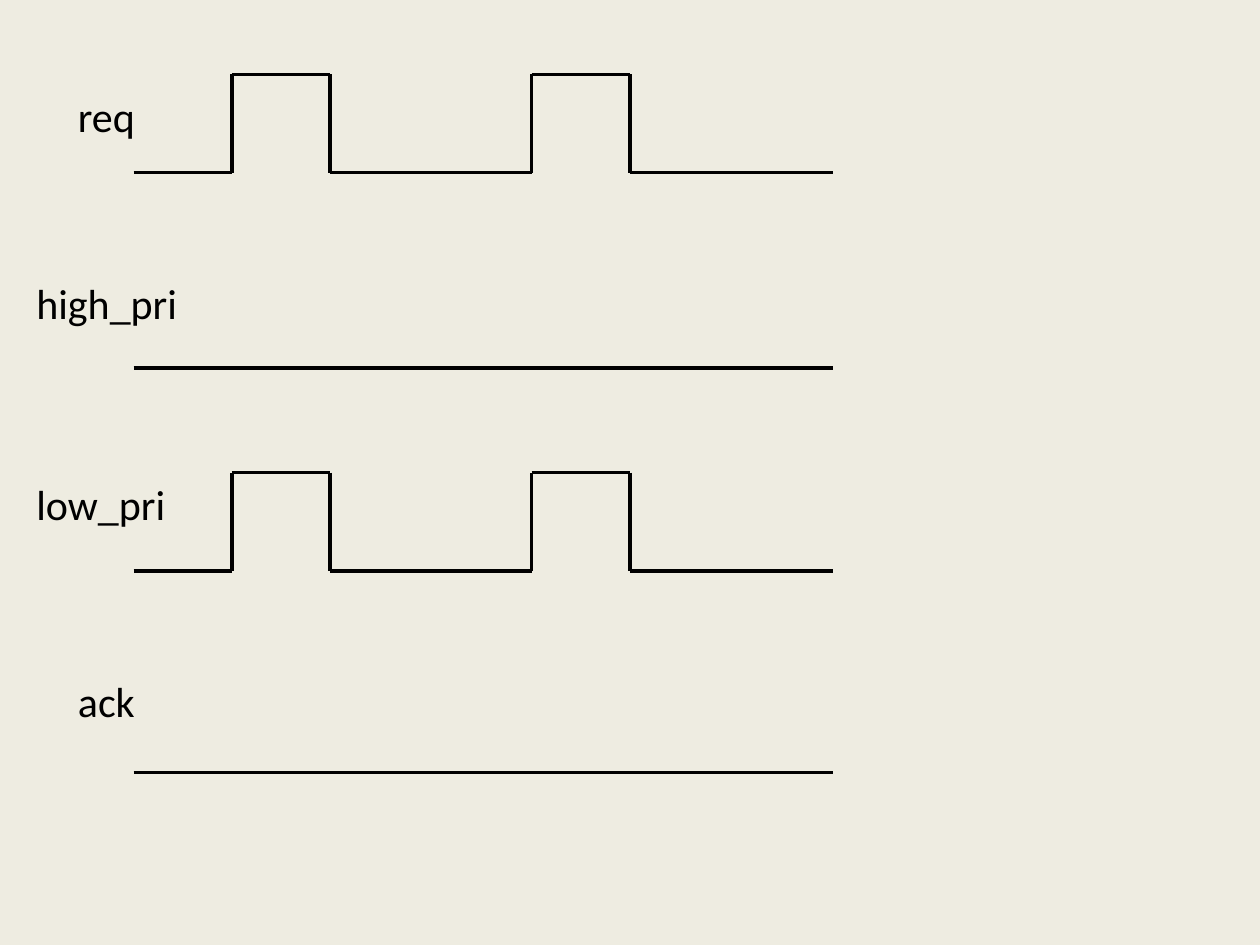
from itertools import pairwise
from pptx import Presentation
from pptx.dml.color import RGBColor
from pptx.enum.shapes import MSO_CONNECTOR as Link
from pptx.enum.text import MSO_AUTO_SIZE as Fit
from pptx.oxml.ns import qn
from pptx.util import Inches, Pt
from lxml.etree import SubElement

INK = RGBColor(0, 0, 0)
PAPER = RGBColor(0xEE, 0xEC, 0xE1)
START, END, RISE = 1.06, 6.61, 0.78
EDGES = [1.84, 2.62, 4.22, 5]
FONT = {"name": "Calibri", "size": Pt(24)}
SIGNALS = [
    {"name": "req", "box": (0.52, 0.67, 0.66, 0.5), "base": 1.37, "edges": EDGES, "wrap": False},
    {"name": "high_pri", "box": (0.19, 2.15, 1.33, 0.5), "base": 2.92, "edges": [], "wrap": False},
    {"name": "low_pri", "box": (0.19, 3.75, 1.23, 0.5), "base": 4.53, "edges": EDGES, "wrap": False},
    {"name": "ack", "box": (0.52, 5.31, 0.82, 0.5), "base": 6.13, "edges": [], "wrap": True},
]


def draw_line(shapes, *ends):
    line = shapes.add_connector(Link.STRAIGHT, *map(Inches, ends))
    line.line.color.rgb = INK
    line.line.width = Pt(2)
    SubElement(line._element.spPr, qn("a:effectLst"))


def draw_wave(shapes, base, edges):
    high = base - RISE
    for i, (left, right) in enumerate(pairwise([START, *edges, END])):
        level = high if i % 2 else base
        draw_line(shapes, left, level, right, level)
    for x in edges:
        draw_line(shapes, x, high, x, base)


def add_label(shapes, name, box, wrap):
    frame = shapes.add_textbox(*map(Inches, box)).text_frame
    frame.word_wrap = wrap
    frame.auto_size = Fit.SHAPE_TO_FIT_TEXT
    run = frame.paragraphs[0].add_run()
    run.text = name
    for key, value in FONT.items():
        setattr(run.font, key, value)
    run.font.color.rgb = INK


def main():
    deck = Presentation()
    deck.slide_width, deck.slide_height = Inches(10), Inches(7.5)
    slide = deck.slides.add_slide(deck.slide_layouts[6])
    fill = slide.background.fill
    fill.solid()
    fill.fore_color.rgb = PAPER
    for sig in SIGNALS:
        shapes = slide.shapes
        group = shapes.add_group_shape().shapes if sig["edges"] else shapes
        draw_wave(group, sig["base"], sig["edges"])
        add_label(shapes, sig["name"], sig["box"], sig["wrap"])
    deck.save("out.pptx")


if __name__ == "__main__":
    main()
